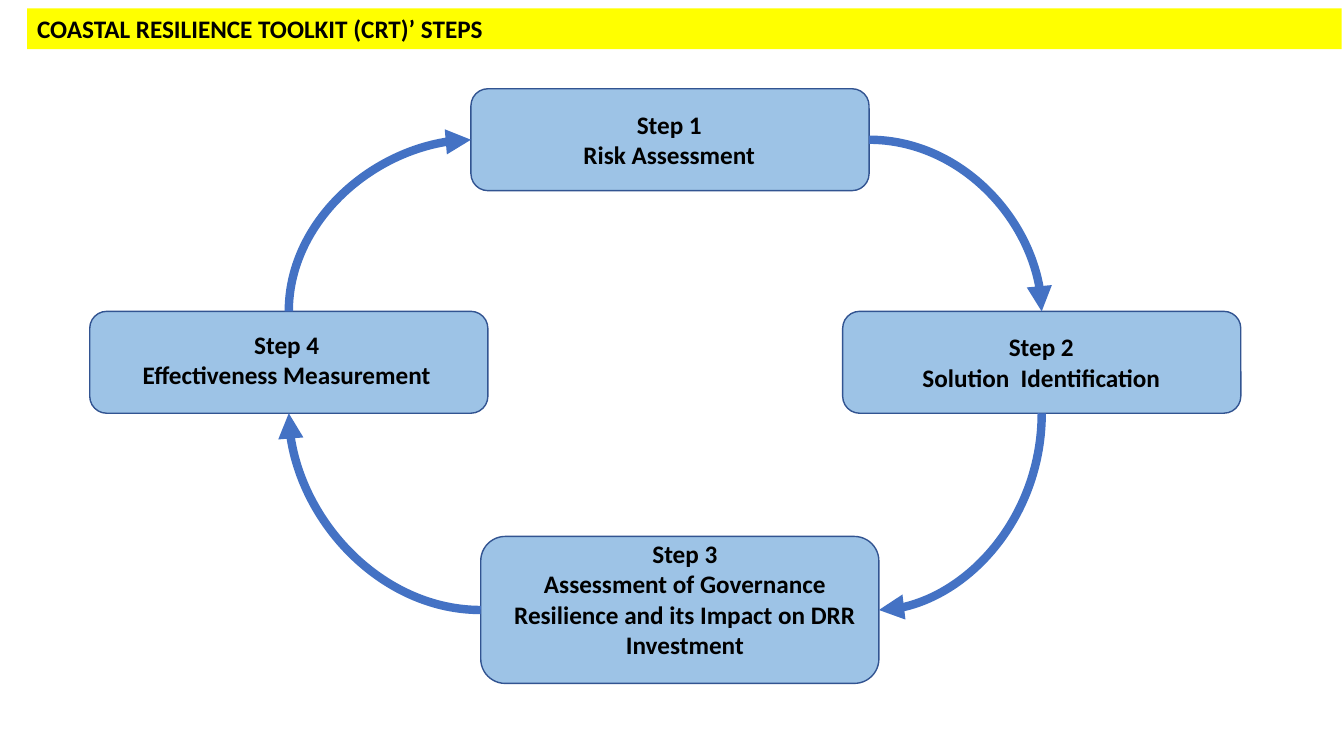
from lxml import etree
from pptx import Presentation
from pptx.dml.color import RGBColor
from pptx.enum.shapes import MSO_CONNECTOR, MSO_SHAPE
from pptx.enum.text import MSO_AUTO_SIZE, PP_ALIGN
from pptx.oxml.ns import qn
from pptx.util import Pt

ROUNDED = MSO_SHAPE.ROUNDED_RECTANGLE
CURVE = MSO_CONNECTOR.CURVE
LEFT, CENTER = PP_ALIGN.LEFT, PP_ALIGN.CENTER
FIT_TEXT = MSO_AUTO_SIZE.SHAPE_TO_FIT_TEXT


def color(value):
    return RGBColor.from_string(value)


def write_text(frame, text, font="Calibri", size=18, ink="000000", bold=True, align=LEFT):
    """Write one paragraph for each line of text."""
    for index, line in enumerate(text.split("\n")):
        para = frame.paragraphs[0] if index == 0 else frame.add_paragraph()
        para.alignment = align
        span = para.add_run()
        span.text = line
        span.font.name = font
        span.font.size = Pt(size)
        span.font.bold = bold
        span.font.color.rgb = color(ink)


class CycleSlide:
    box_fill, box_line = "9DC3E6", "325491"
    arrow_color, arrow_width = "4472C4", 6
    title_fill = "FFFF00"

    def __init__(self, deck):
        self.page = deck.slides.add_slide(deck.slide_layouts[6])

    def step_box(self, left, top, width, height):
        box = self.page.shapes.add_shape(ROUNDED, Pt(left), Pt(top), Pt(width), Pt(height))
        box.shadow.inherit = False
        box.fill.solid()
        box.fill.fore_color.rgb = color(self.box_fill)
        box.line.color.rgb = color(self.box_line)
        box.line.width = Pt(1)

    def label(self, left, top, width, height, text, fill=None, **style):
        box = self.page.shapes.add_textbox(Pt(left), Pt(top), Pt(width), Pt(height))
        if fill:
            box.fill.solid()
            box.fill.fore_color.rgb = color(fill)
        box.text_frame.word_wrap = True
        box.text_frame.auto_size = FIT_TEXT
        write_text(box.text_frame, text, **style)

    def arc_arrow(self, start, end, quarter_turns):
        """Draw a quarter arc; its frame is turned about its centre."""
        width, height = abs(end[0] - start[0]), abs(end[1] - start[1])
        if quarter_turns % 2:
            width, height = height, width
        left = (start[0] + end[0] - width) / 2
        top = (start[1] + end[1] - height) / 2
        arrow = self.page.shapes.add_connector(
            CURVE, Pt(left), Pt(top), Pt(left + width), Pt(top + height))
        arrow.line.color.rgb = color(self.arrow_color)
        arrow.line.width = Pt(self.arrow_width)
        properties = arrow._element.spPr
        properties.find(qn("a:xfrm")).set("rot", str(quarter_turns * 90 * 60000))
        properties.find(qn("a:prstGeom")).set("prst", "curvedConnector2")
        etree.SubElement(properties.find(qn("a:ln")), qn("a:tailEnd")).set("type", "triangle")
        etree.SubElement(properties, qn("a:effectLst"))


def side_middles(left, top, width, height):
    """Return the middles of the top, left, bottom and right sides."""
    middle_x, middle_y = left + width / 2, top + height / 2
    return ((middle_x, top), (left, middle_y),
            (middle_x, top + height), (left + width, middle_y))


def main():
    deck = Presentation()
    deck.slide_width, deck.slide_height = Pt(960), Pt(540)
    slide = CycleSlide(deck)

    # Steps, clockwise from the top: box frame, label frame, text
    steps = [
        ((336.4, 63.4, 284.4, 72.8), (395.3, 74.2, 165.6, 51),
         "Step 1\nRisk Assessment"),
        ((601.9, 222.4, 284.4, 72.8), (647.3, 233.3, 193, 51),
         "Step 2\nSolution  Identification"),
        ((343.4, 383.2, 284.4, 105), (357.8, 381, 262.8, 94.4),
         "Step 3\nAssessment of Governance Resilience and its Impact on DRR Investment"),
        ((64.1, 222.4, 284.4, 72.8), (73.4, 231.8, 262.8, 51),
         "Step 4\nEffectiveness Measurement"),
    ]
    for frame, _, _ in steps:
        slide.step_box(*frame)
    for _, frame, text in steps:
        slide.label(*frame, text, align=CENTER)

    # Arrows: side left and side entered, 0 top, 1 left, 2 bottom, 3 right
    middles = [side_middles(*frame) for frame, _, _ in steps]
    for index, (leave, enter) in enumerate([(3, 0), (2, 3), (1, 2), (0, 1)]):
        following = (index + 1) % len(steps)
        slide.arc_arrow(middles[index][leave], middles[following][enter], index)

    # Title band
    slide.label(19.4, 6, 939, 29.1, "COASTAL RESILIENCE TOOLKIT (CRT)’ STEPS",
                fill=slide.title_fill)

    deck.save("out.pptx")


if __name__ == "__main__":
    main()
